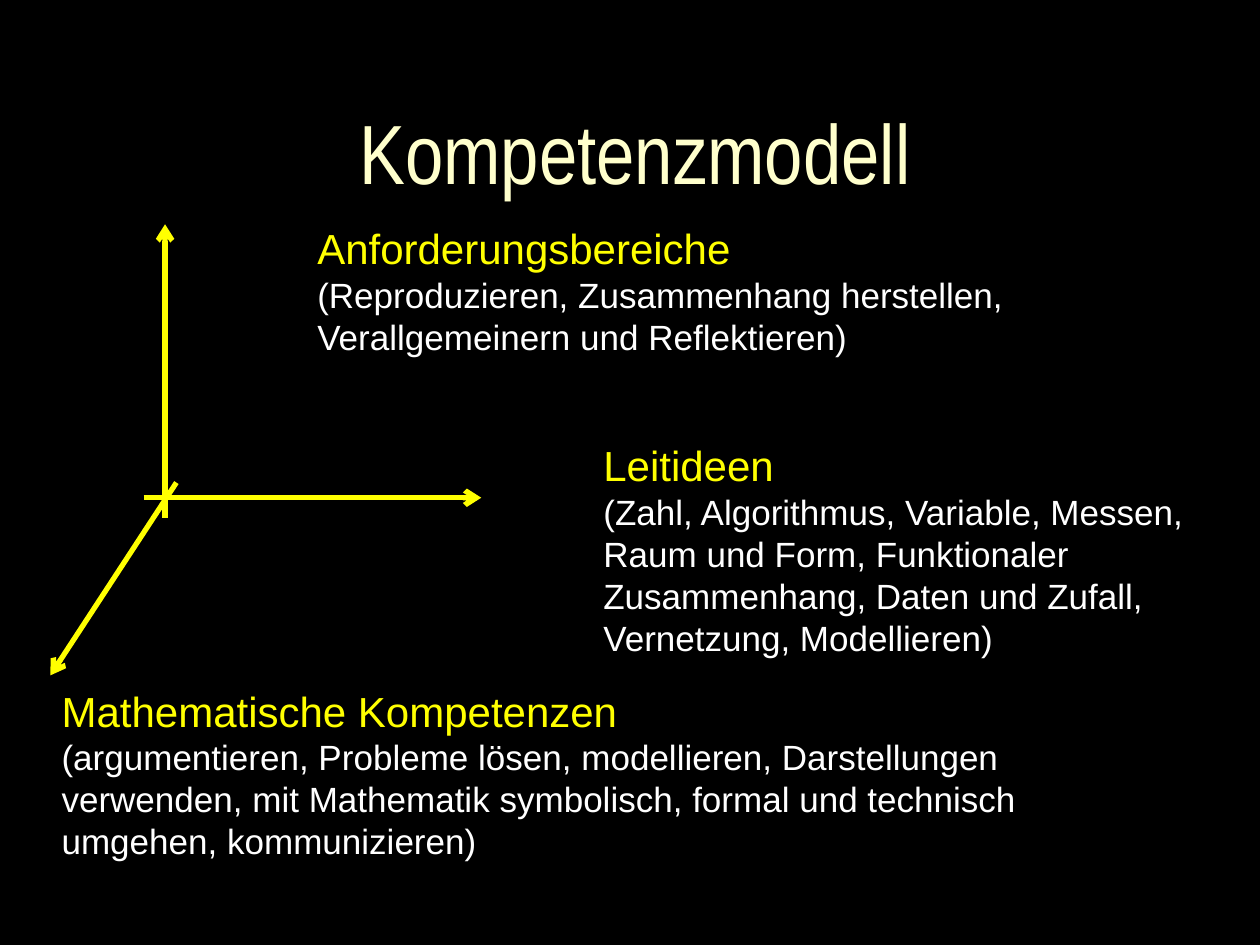
from dataclasses import dataclass

from lxml import etree
from pptx import Presentation
from pptx import util as u
from pptx.dml.color import RGBColor
from pptx.enum import shapes, text
from pptx.oxml import ns


@dataclass(frozen=True)
class Theme:
    back: str = "000000"
    title: str = "FFFFCC"
    accent: str = "FFFF00"
    body: str = "FFFFFF"
    font: str = "Arial"
    narrow: str = "Arial Narrow"
    title_size: int = 48
    head_size: int = 24
    body_size: int = 20
    line: int = 3


THEME = Theme()


def color(code):
    return RGBColor.from_string(code)


def write(para, words, size, tint, font=THEME.font):
    """Add formatted text; each newline becomes a line break."""
    for i, line in enumerate(words.split("\n")):
        if i:
            para.add_line_break()
        if line:
            run = para.add_run()
            run.text = line
            run.font.size = u.Pt(size)
            run.font.name = font
            run.font.color.rgb = color(tint)


def add_title(slide, words, box):
    title = slide.shapes.title
    title.left, title.top, title.width, title.height = map(u.Inches, box)
    frame = title.text_frame
    frame.word_wrap = True
    frame.auto_size = text.MSO_AUTO_SIZE.NONE
    frame.vertical_anchor = text.MSO_ANCHOR.MIDDLE
    para = frame.paragraphs[0]
    para.alignment = text.PP_ALIGN.CENTER
    para.line_spacing = 0.7
    write(para, words, THEME.title_size, THEME.title, THEME.narrow)


def add_label(slide, head, body, box):
    frame = slide.shapes.add_textbox(*map(u.Inches, box)).text_frame
    frame.word_wrap = True
    frame.auto_size = text.MSO_AUTO_SIZE.SHAPE_TO_FIT_TEXT
    para = frame.paragraphs[0]
    write(para, head + " \n", THEME.head_size, THEME.accent)
    write(para, body, THEME.body_size, THEME.body)


def add_axis(group, start, end):
    axis = group.shapes.add_connector(
        shapes.MSO_CONNECTOR.STRAIGHT, *map(u.Inches, start + end))
    axis.line.color.rgb = color(THEME.accent)
    axis.line.width = u.Pt(THEME.line)
    etree.SubElement(axis.line._get_or_add_ln(), ns.qn("a:tailEnd"), type="arrow")
    etree.SubElement(axis._element.spPr, ns.qn("a:effectLst"))


def main():
    deck = Presentation()
    deck.slide_width, deck.slide_height = u.Inches(10), u.Inches(7.5)
    slide = deck.slides.add_slide(deck.slide_layouts[5])
    fill = slide.background.fill
    fill.solid()
    fill.fore_color.rgb = color(THEME.back)

    add_title(slide, "Kompetenzmodell", (0.33, 0.67, 9.42, 1.25))

    # One label for each dimension of the model
    add_label(slide, "Leitideen",
              "(Zahl, Algorithmus, Variable, Messen, Raum und Form, "
              "Funktionaler Zusammenhang, Daten und Zufall, "
              "Vernetzung, Modellieren)", (4.69, 3.44, 5.08, 1.85))
    add_label(slide, "Mathematische Kompetenzen",
              "(argumentieren, Probleme lösen, modellieren, Darstellungen "
              "verwenden, mit Mathematik symbolisch, formal und technisch "
              "umgehen, kommunizieren)", (0.39, 5.39, 8.91, 1.51))
    add_label(slide, "Anforderungsbereiche",
              "(Reproduzieren, Zusammenhang herstellen, \n"
              "Verallgemeinern und Reflektieren)", (2.42, 1.72, 7.27, 1.58))

    # Three axes through a common origin
    axes = slide.shapes.add_group_shape()
    add_axis(axes, (1.14, 3.95), (3.82, 3.95))
    add_axis(axes, (1.31, 4.11), (1.31, 1.78))
    add_axis(axes, (1.4, 3.83), (0.4, 5.36))

    deck.save("out.pptx")


if __name__ == "__main__":
    main()
